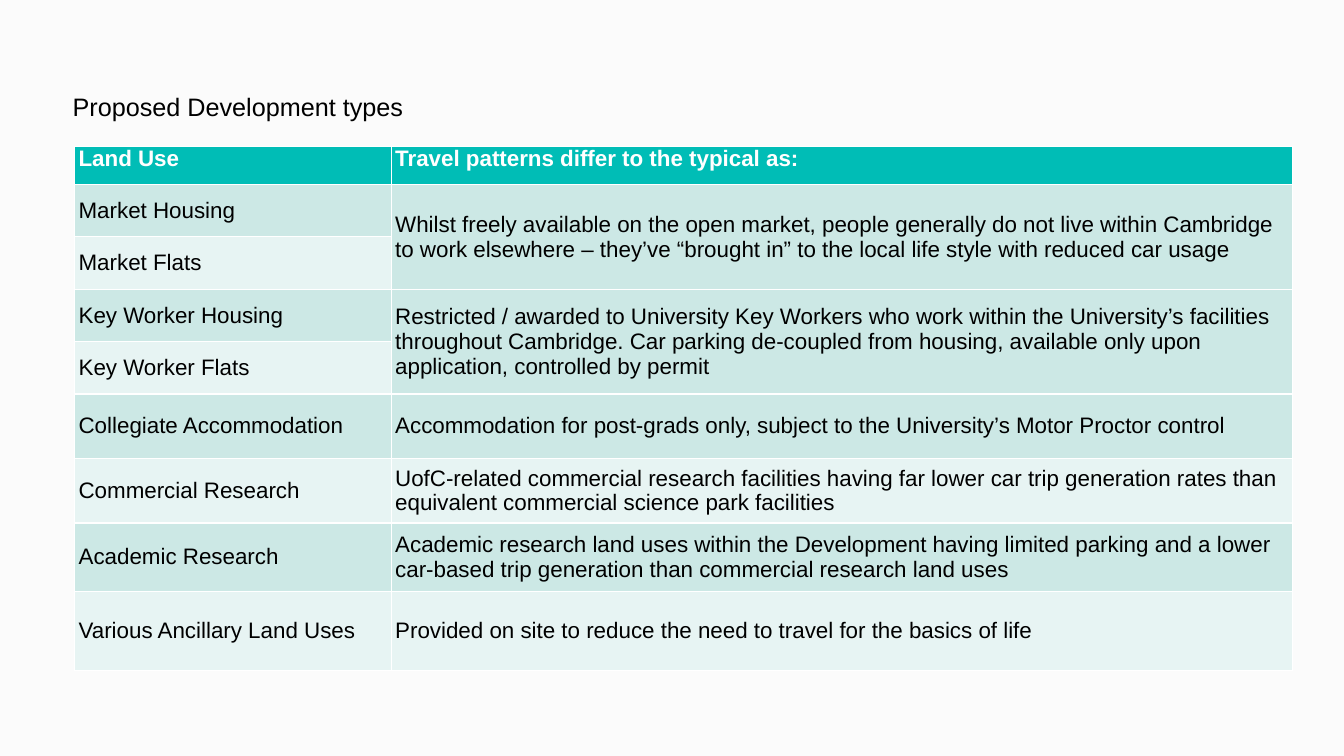
from lxml import etree
from pptx import Presentation
from pptx import util as u
from pptx.dml.color import RGBColor
from pptx.enum import text
from pptx.oxml import ns

PX = 9144  # 100 px to the inch

WHITE, BLACK, TEAL = "FFFFFF", "000000", "00BDB6"
BANDS = ("CCE8E5", "E7F4F3")

HEADINGS = ("Land Use", "Travel patterns differ to the typical as:")

# Each group: land uses that share one travel pattern, and that pattern
GROUPS = [
    (["Market Housing", "Market Flats"],
     "Whilst freely available on the open market, people generally do not live within "
     "Cambridge to work elsewhere – they’ve “brought in” to the local life style with "
     "reduced car usage"),
    (["Key Worker Housing", "Key Worker Flats"],
     "Restricted / awarded to University Key Workers who work within the University’s "
     "facilities throughout Cambridge. Car parking de-coupled from housing, available "
     "only upon application, controlled by permit"),
    (["Collegiate Accommodation"],
     "Accommodation for post-grads only, subject to the University’s Motor Proctor control"),
    (["Commercial Research"],
     "UofC-related commercial research facilities having far lower car trip generation "
     "rates than equivalent commercial science park facilities"),
    (["Academic Research"],
     "Academic research land uses within the Development having limited parking and a "
     "lower car-based trip generation than commercial research land uses"),
    (["Various Ancillary Land Uses"],
     "Provided on site to reduce the need to travel for the basics of life"),
]
COLUMN_WIDTHS = (314, 894)
ROW_HEIGHTS = (38, 52, 52, 52, 52, 64, 64, 68, 78)


def px(length):
    return u.Emu(length * PX)


def colour(hex_value):
    return RGBColor.from_string(hex_value)


def write(frame, content, size=16, ink=BLACK, bold=False, after=None, spacing=None):
    frame.word_wrap = True
    paragraph = frame.paragraphs[0]
    paragraph.alignment = text.PP_ALIGN.LEFT
    paragraph.space_after = after
    paragraph.line_spacing = spacing
    run = paragraph.add_run()
    run.text = content
    font = run.font
    font.name, font.size, font.bold = "Arial", u.Pt(size), bold
    font.color.rgb = colour(ink)


class LandUseSlide:
    def __init__(self, deck, background):
        self.slide = deck.slides.add_slide(deck.slide_layouts[5])
        fill = self.slide.background.fill
        fill.solid()
        fill.fore_color.rgb = colour(background)

    def title(self, content, left, top, width, height):
        title = self.slide.shapes.title
        title.left, title.top = px(left), px(top)
        title.width, title.height = px(width), px(height)
        frame = title.text_frame
        frame.auto_size = text.MSO_AUTO_SIZE.NONE
        frame.vertical_anchor = text.MSO_ANCHOR.TOP
        write(frame, content, size=18, spacing=0.9)

    def table(self, left, top, widths, heights):
        frame = self.slide.shapes.add_table(
            len(heights), len(widths), px(left), px(top), px(sum(widths)), px(sum(heights)))
        table = frame.table
        for column, width in zip(table.columns, widths):
            column.width = px(width)
        for row, height in zip(table.rows, heights):
            row.height = px(height)
        return table

    def cell(self, cell, fill, content=None, anchor=text.MSO_ANCHOR.MIDDLE, **style):
        cell.margin_left = cell.margin_right = px(4)
        cell.margin_top = cell.margin_bottom = 0
        cell.vertical_anchor = anchor
        self.borders(cell)
        cell.fill.solid()
        cell.fill.fore_color.rgb = colour(fill)
        if content:
            write(cell.text_frame, content, after=u.Pt(12), **style)

    def borders(self, cell):
        properties = cell._tc.get_or_add_tcPr()
        for side in ("lnL", "lnR", "lnT", "lnB"):
            line = etree.SubElement(properties, ns.qn("a:" + side), w=str(u.Pt(1)))
            solid = etree.SubElement(line, ns.qn("a:solidFill"))
            etree.SubElement(solid, ns.qn("a:srgbClr"), val=WHITE)


def main():
    deck = Presentation()
    deck.slide_width, deck.slide_height = px(1333), px(750)
    page = LandUseSlide(deck, "FBFBFB")
    page.title("Proposed Development types", 62, 89, 916, 46)

    # Table header
    table = page.table(74, 145, COLUMN_WIDTHS, ROW_HEIGHTS)
    for column, heading in enumerate(HEADINGS):
        page.cell(table.cell(0, column), TEAL, heading,
                  anchor=text.MSO_ANCHOR.TOP, ink=WHITE, bold=True)

    # Land uses in alternating bands, with shared patterns merged
    row = 1
    for land_uses, pattern in GROUPS:
        first = row
        for land_use in land_uses:
            band = BANDS[(row - 1) % 2]
            page.cell(table.cell(row, 0), band, land_use)
            page.cell(table.cell(row, 1), band, pattern if row == first else None)
            row += 1
        if len(land_uses) > 1:
            table.cell(first, 1).merge(table.cell(row - 1, 1))

    deck.save("out.pptx")


if __name__ == "__main__":
    main()
